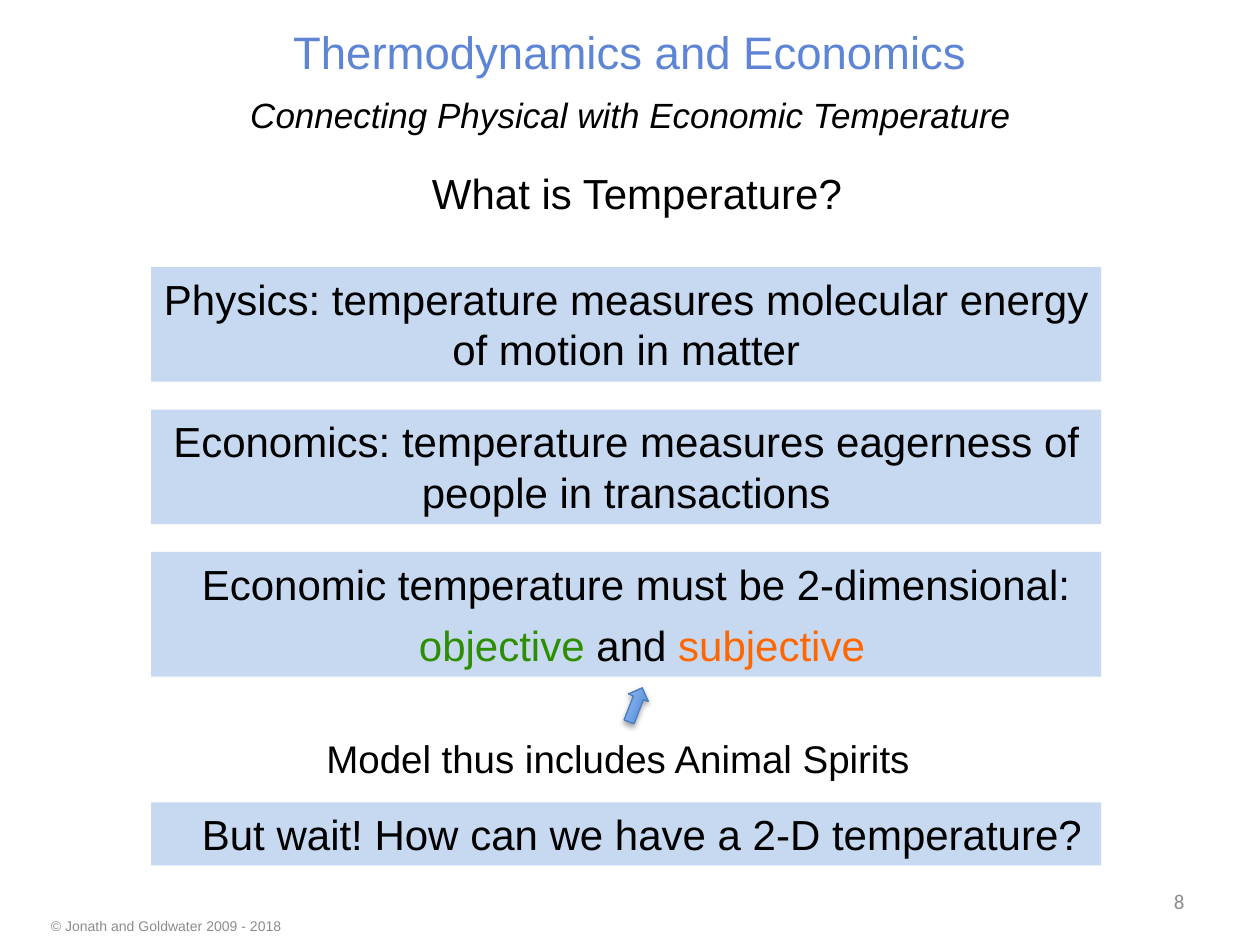
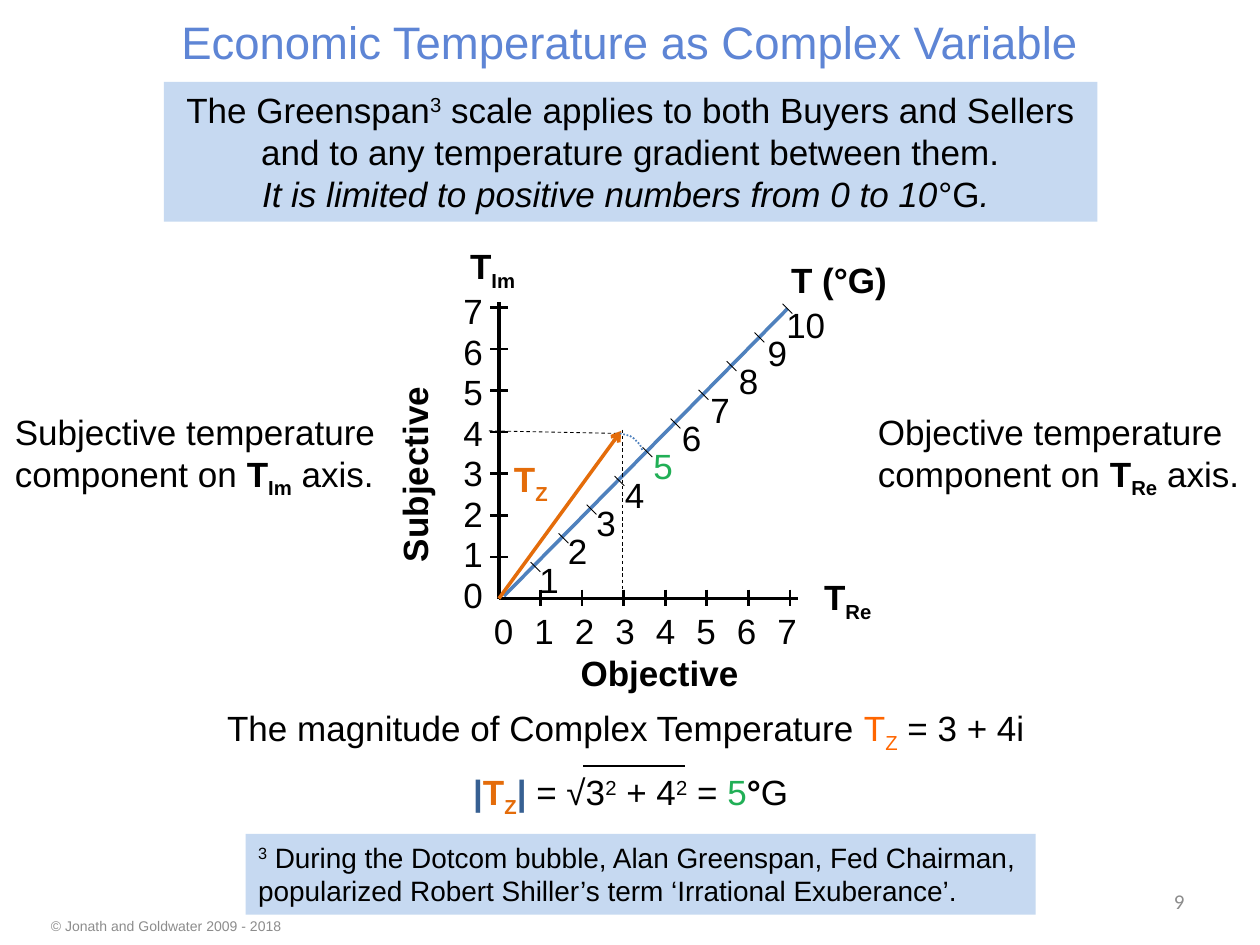
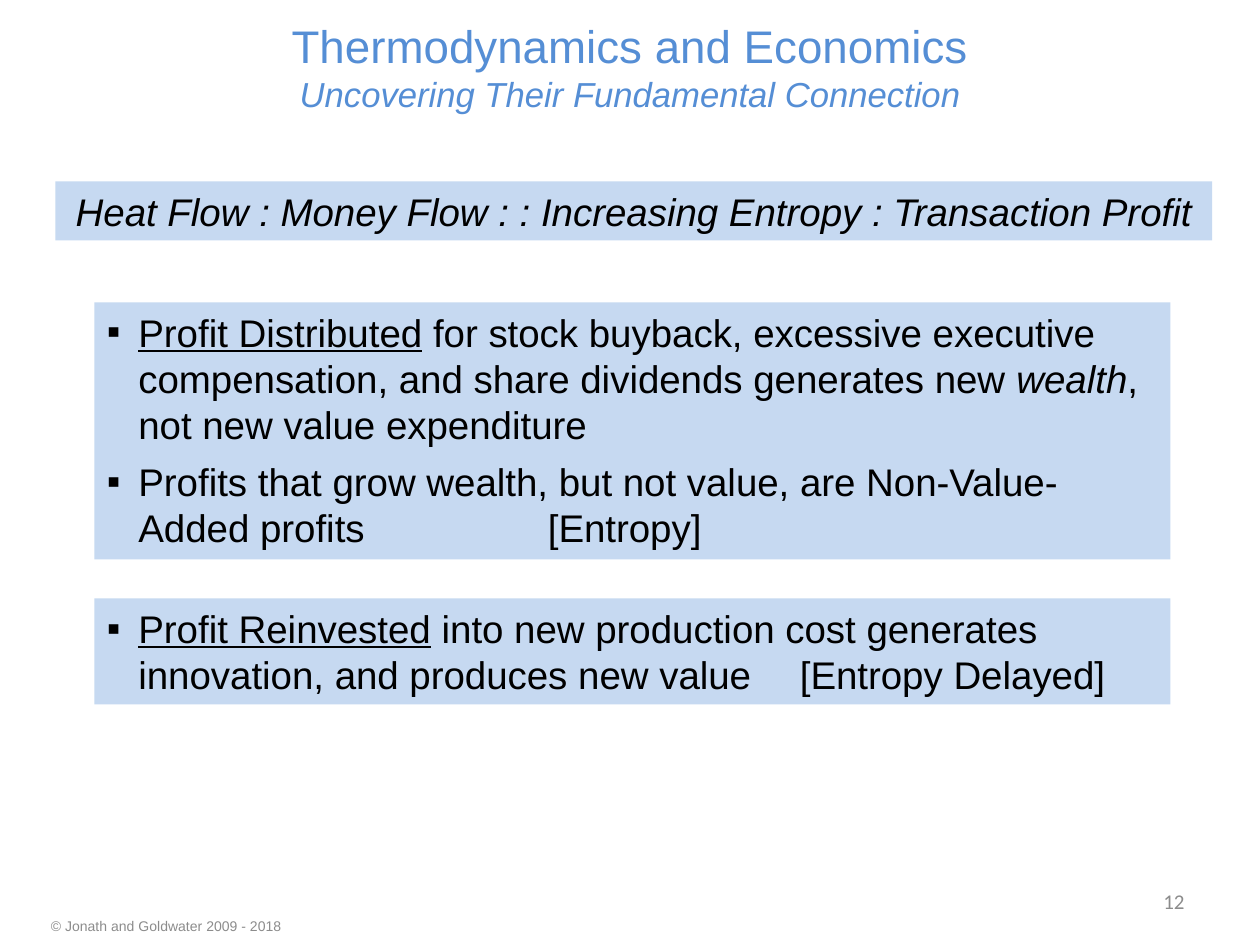
from dataclasses import dataclass
from typing import NamedTuple, Optional

from lxml.etree import SubElement
from pptx import Presentation
from pptx.dml.color import RGBColor
from pptx.enum.dml import MSO_LINE
from pptx.enum.shapes import MSO_CONNECTOR, MSO_SHAPE
from pptx.enum.text import MSO_ANCHOR, MSO_AUTO_SIZE, PP_ALIGN
from pptx.oxml.ns import qn
from pptx.util import Pt

# Shared style
COLORS = {
    "black": "000000",
    "title": "5E85D5",
    "title_light": "558ED5",
    "band": "C6D9F1",
    "grey": "8C8C8C",
    "objective": "2E8E01",
    "subjective": "FF6600",
    "vector": "E46C0A",
    "bars": "376092",
    "five": "21AF56",
    "scale": "4F81BD",
    "arrow_dark": "3F80CE",
    "arrow_light": "A4C4FF",
    "arrow_line": "4B7EBC",
}
LEFT, CENTER, RIGHT = PP_ALIGN.LEFT, PP_ALIGN.CENTER, PP_ALIGN.RIGHT
TOP, MIDDLE = MSO_ANCHOR.TOP, MSO_ANCHOR.MIDDLE
FOOTER = "© Jonath and Goldwater 2009 - 2018 "
SUB, SUPER = -25, 30


class Box(NamedTuple):
    left: float
    top: float
    width: float
    height: float


class Point(NamedTuple):
    x: float
    y: float


@dataclass
class Run:
    text: str
    color: str = "black"
    bold: bool = False
    italic: bool = False
    underline: bool = False
    baseline: int = 0
    size: Optional[float] = None
    break_before: bool = False


@dataclass
class Block:
    """One paragraph: its runs and its layout."""
    runs: list[Run]
    align: PP_ALIGN = LEFT
    space_before: float = 0
    space_after: float = 0
    margin: float = 0
    bullet: str = ""


def rgb(name: str) -> RGBColor:
    return RGBColor.from_string(COLORS[name])


# Text
def add_run(paragraph, text: str, *, size: float, color: str = "black", bold: bool = False,
            italic: bool = False, underline: bool = False, baseline: int = 0,
            font: str = "Arial") -> None:
    run = paragraph.add_run()
    run.text = text
    run.font.name = font
    run.font.size = Pt(size)
    run.font.bold = bold
    run.font.italic = italic
    run.font.underline = underline
    run.font.color.rgb = rgb(color)
    if baseline:
        run._r.get_or_add_rPr().set("baseline", str(baseline * 1000))


def fill_text(shape, blocks: list[Block], size: float, anchor=TOP, wrap: bool = True,
              inset: bool = True, font: str = "Arial") -> None:
    frame = shape.text_frame
    frame.auto_size = MSO_AUTO_SIZE.NONE
    frame.word_wrap = wrap
    frame.vertical_anchor = anchor
    if not inset:
        frame.margin_left = frame.margin_right = frame.margin_top = frame.margin_bottom = Pt(0)
    for index, block in enumerate(blocks):
        paragraph = frame.add_paragraph() if index else frame.paragraphs[0]
        paragraph.alignment = block.align
        paragraph.space_before = Pt(block.space_before)
        paragraph.space_after = Pt(block.space_after)
        properties = paragraph._p.get_or_add_pPr()
        if block.margin:
            properties.set("marL", str(Pt(block.margin)))
            properties.set("indent", str(Pt(-block.margin if block.bullet else 0)))
        if block.bullet:
            SubElement(properties, qn("a:buFont")).set("typeface", "Arial")
            SubElement(properties, qn("a:buChar")).set("char", block.bullet)
        for run in block.runs:
            if run.break_before:
                paragraph.add_line_break()
            add_run(paragraph, run.text, size=run.size or size, color=run.color, bold=run.bold,
                    italic=run.italic, underline=run.underline, baseline=run.baseline, font=font)


def add_text(slide, box: Box, blocks: list[Block], size: float, **layout):
    shape = slide.shapes.add_textbox(*map(Pt, box))
    fill_text(shape, blocks, size, **layout)
    return shape


def add_band(slide, box: Box, blocks: list[Block], size: float) -> None:
    shape = slide.shapes.add_shape(MSO_SHAPE.RECTANGLE, *map(Pt, box))
    shape.shadow.inherit = False
    shape.fill.solid()
    shape.fill.fore_color.rgb = rgb("band")
    shape.line.fill.background()
    fill_text(shape, blocks, size)


# Lines
def add_line(slide, start: Point, end: Point, width: float, color: str = "black",
             dash=None, arrow: bool = False) -> None:
    line = slide.shapes.add_connector(MSO_CONNECTOR.STRAIGHT, *map(Pt, (*start, *end)))
    line.line.color.rgb = rgb(color)
    line.line.width = Pt(width)
    if dash:
        line.line.dash_style = dash
    if arrow:
        SubElement(line.line._get_or_add_ln(), qn("a:tailEnd")).set("type", "arrow")
    SubElement(line._element.spPr, qn("a:effectLst"))


# Title, page number and footer of every slide
def start_slide(presentation, number: str, title_box: Box, title: list[Run]):
    slide = presentation.slides.add_slide(presentation.slide_layouts[5])
    placeholder = slide.shapes.title
    placeholder.left, placeholder.top, placeholder.width, placeholder.height = map(Pt, title_box)
    fill_text(placeholder, [Block(title, CENTER)], 26, anchor=MIDDLE)
    add_text(slide, Box(516.2, 500.4, 167.8, 28.8), [Block([Run(number, "grey")], RIGHT)], 12,
             anchor=MIDDLE, font="Calibri")
    add_text(slide, Box(20.2, 518.2, 151.9, 22), [Block([Run(FOOTER, "grey")], CENTER)], 8,
             anchor=MIDDLE)
    return slide


def add_up_arrow(slide) -> None:
    arrow = slide.shapes.add_shape(MSO_SHAPE.RIGHT_ARROW, *map(Pt, Box(352.8, 396.7, 20.9, 12.2)))
    arrow.rotation = 291.2
    arrow.fill.gradient()
    arrow.fill.gradient_angle = 90
    for stop, color in zip(arrow.fill.gradient_stops, ("arrow_dark", "arrow_light")):
        stop.color.rgb = rgb(color)
    arrow.line.color.rgb = rgb("arrow_line")
    arrow.line.width = Pt(0.75)
    effects = SubElement(arrow._element.spPr, qn("a:effectLst"))
    shadow = SubElement(effects, qn("a:outerShdw"), blurRad=str(Pt(3.1)), dist=str(Pt(1.8)),
                        dir="5400000", rotWithShape="0")
    color = SubElement(shadow, qn("a:srgbClr"), val=COLORS["black"])
    SubElement(color, qn("a:alpha"), val="35000")


def build_definitions(presentation) -> None:
    slide = start_slide(presentation, "8", Box(36, 9.4, 648, 39.6),
                        [Run("Thermodynamics and Economics", "title")])
    add_text(slide, Box(123.1, 49, 474.5, 33.1),
             [Block([Run("Connecting Physical with Economic Temperature", italic=True)], CENTER)],
             20, anchor=MIDDLE)
    add_text(slide, Box(20.2, 92.2, 687.6, 36), [Block([Run("What is Temperature?")], CENTER)], 24)

    # Bands with definitions
    left, width, first_top, step = 86.4, 542.9, 152.6, 81.4
    indented = {"align": CENTER, "space_after": 6, "margin": 18}
    bands = [
        (65.5, [Block([Run("Physics: temperature measures molecular energy of motion in matter")],
                      CENTER)]),
        (65.5, [Block([Run("Economics: temperature measures eagerness of people in transactions")],
                      CENTER)]),
        (71.3, [Block([Run("Economic temperature must be 2-dimensional: ")], **indented),
                Block([Run("objective", "objective"), Run(" and "),
                       Run("subjective", "subjective")], **indented)]),
    ]
    for index, (height, blocks) in enumerate(bands):
        add_band(slide, Box(left, first_top + index * step, width, height), blocks, 24)

    # Conclusion
    add_text(slide, Box(177.1, 416.2, 352.1, 33.8),
             [Block([Run("Model thus includes Animal Spirits")], CENTER)], 22)
    add_up_arrow(slide)
    add_band(slide, Box(left, 458.6, width, 36),
             [Block([Run("But wait! How can we have a 2-D temperature?")], **indented)], 24)


# Temperature diagram
def add_label(slide, left: float, top: float, runs: list[Run]) -> None:
    add_text(slide, Box(left, top, 11.5 * sum(len(run.text) for run in runs), 24.5),
             [Block(runs)], 20, wrap=False, inset=False)


def draw_axes(slide, origin: Point) -> None:
    tick_step, label_step = 23.76, 23.14
    add_line(slide, origin, Point(455.8, origin.y), 2)
    add_line(slide, origin, Point(origin.x, 172.8), 2)
    for value in range(8):
        if value:
            x, y = origin.x + value * tick_step, origin.y - value * tick_step
            add_line(slide, Point(x, 337), Point(x, 346.3), 1.5)
            add_line(slide, Point(280.1, y), Point(290.2, y), 1.5)
        add_label(slide, 282.2 + value * label_step, 348.3, [Run(str(value))])
        add_label(slide, 264.8, 327.6 - value * label_step, [Run(str(value))])

    add_label(slide, 268.6, 139.7, [Run("T", bold=True), Run("Im", bold=True, baseline=SUB)])
    add_label(slide, 470.9, 329, [Run("T", bold=True), Run("Re", bold=True, baseline=SUB)])
    add_text(slide, Box(324.7, 368.6, 139.7, 31.7), [Block([Run("Objective", bold=True)])], 20)
    subjective = add_text(slide, Box(173.3, 248.7, 127.4, 31.7),
                          [Block([Run("Subjective", bold=True)])], 20)
    subjective.rotation = 270


def draw_greenspan_scale(slide) -> None:
    add_line(slide, Point(288, 340.6), Point(450, 176.4), 2, "scale")
    half_tick, last_label_left = 2.8, 449.3
    for value in range(1, 11):
        step = value - 1
        x, y = 306 + 16 * step, 324 - 16.4 * step
        add_line(slide, Point(x - half_tick, y - half_tick),
                 Point(x + half_tick, y + half_tick), 0.5)
        add_label(slide, min(308.2 + 16.3 * step, last_label_left), 319 - 16.2 * step,
                  [Run(str(value), "five" if value == 5 else "black")])
    add_text(slide, Box(445, 144, 69.8, 31.7), [Block([Run("T (°G)", bold=True)])], 20, wrap=False)


def draw_vector(slide, origin: Point) -> None:
    add_line(slide, Point(279.4, 246.2), Point(354.2, 247.7), 0.5, dash=MSO_LINE.DASH)
    add_line(slide, Point(355.7, 245.5), Point(355.7, origin.y), 0.5, dash=MSO_LINE.DASH)
    add_line(slide, origin, Point(355, 246.2), 2, "vector", arrow=True)
    add_text(slide, Box(286.6, 257.8, 36, 32.4),
             [Block([Run("T", "vector", bold=True),
                     Run("Z", "vector", bold=True, baseline=SUB)])], 20, wrap=False)
    # Arc from the vector's head to 5 on the scale
    arc = [Point(354.2, 247.7), Point(357.1, 248.4), Point(360, 249.1), Point(362.2, 250.6),
           Point(364.3, 252.7), Point(365.8, 254.2), Point(367.2, 257.8)]
    builder = slide.shapes.build_freeform(Pt(arc[0].x), Pt(arc[0].y))
    builder.add_line_segments([(Pt(x), Pt(y)) for x, y in arc[1:]], close=False)
    shape = builder.convert_to_shape()
    shape.shadow.inherit = False
    shape.fill.background()
    shape.line.color.rgb = rgb("scale")
    shape.line.width = Pt(1)
    shape.line.dash_style = MSO_LINE.ROUND_DOT


def build_complex_temperature(presentation) -> None:
    slide = start_slide(presentation, "9", Box(36, 4.3, 648, 38.9),
                        [Run("Economic Temperature as Complex Variable", "title")])
    add_band(slide, Box(93.6, 46.8, 533.5, 79.9), [
        Block([Run("The Greenspan"), Run("3", baseline=SUPER),
               Run(" scale applies to both Buyers and Sellers and to any temperature "
                   "gradient between them.")], CENTER),
        Block([Run("It is limited to positive numbers from 0 to 10", italic=True), Run("°G"),
               Run(". ", italic=True)], CENTER),
    ], 20)

    origin = Point(285.1, 342)
    draw_greenspan_scale(slide)
    draw_axes(slide, origin)
    draw_vector(slide, origin)

    # Notes beside the diagram
    for name, axis, left in (("Subjective", "Im", 1.4), ("Objective", "Re", 494.6)):
        add_text(slide, Box(left, 230.8, 225, 55.4),
                 [Block([Run(f"{name} temperature component on "), Run("T", bold=True),
                         Run(axis, bold=True, baseline=SUB), Run(" axis.")])], 20)

    # Magnitude and footnote
    add_text(slide, Box(108, 400.3, 504.7, 65.5), [
        Block([Run("The magnitude of Complex Temperature "), Run("T", "subjective"),
               Run("Z", "subjective", baseline=SUB), Run(" = 3 + 4i ")], CENTER),
        Block([Run("|", "bars", bold=True), Run("T", "vector", bold=True),
               Run("Z", "vector", bold=True, baseline=SUB), Run("| ", "bars", bold=True),
               Run("= √3"), Run("2", baseline=SUPER), Run(" + 4"), Run("2", baseline=SUPER),
               Run(" = "), Run("5", "five"), Run("°", bold=True), Run("G")],
              CENTER, space_before=9.2),
    ], 20)
    add_line(slide, Point(333.4, 437.8), Point(391.7, 437.8), 1.5)
    add_band(slide, Box(140.4, 476.6, 451.4, 46.1), [
        Block([Run("3", baseline=SUPER),
               Run(" During the Dotcom bubble, Alan Greenspan, Fed Chairman, popularized "
                   "Robert Shiller’s term ‘Irrational Exuberance’.")]),
    ], 16)


def build_profit(presentation) -> None:
    slide = start_slide(presentation, "12", Box(36, 15.8, 648, 43.9), [
        Run("Thermodynamics and Economics", "title_light", size=26.1),
        Run("Uncovering Their Fundamental Connection", "title_light", italic=True, size=19.8,
            break_before=True),
    ])
    add_band(slide, Box(31.7, 103.7, 661, 33.8), [
        Block([Run("Heat Flow : Money Flow : : Increasing Entropy : Transaction Profit",
                   italic=True)], CENTER),
    ], 22)

    # Uses of profit
    bulleted = {"space_after": 6, "margin": 18, "bullet": "▪"}
    add_band(slide, Box(54, 172.8, 614.9, 146.9), [
        Block([Run("Profit Distributed", underline=True),
               Run(" for stock buyback, excessive executive compensation, and share dividends "
                   "generates new "),
               Run("wealth", italic=True), Run(", not new value expenditure")], **bulleted),
        Block([Run("Profits that grow wealth, but not value, are Non-Value-Added profits "
                   "\t\t\t[Entropy]")], **bulleted),
    ], 22)
    add_band(slide, Box(54, 342, 614.9, 60.5), [
        Block([Run("Profit Reinvested", underline=True),
               Run(" into new production cost generates innovation, and produces new value"
                   "\t[Entropy Delayed]")], **bulleted),
    ], 22)


def main() -> None:
    presentation = Presentation()
    presentation.slide_width, presentation.slide_height = Pt(720), Pt(540)
    build_definitions(presentation)
    build_complex_temperature(presentation)
    build_profit(presentation)
    presentation.save("out.pptx")


if __name__ == "__main__":
    main()
